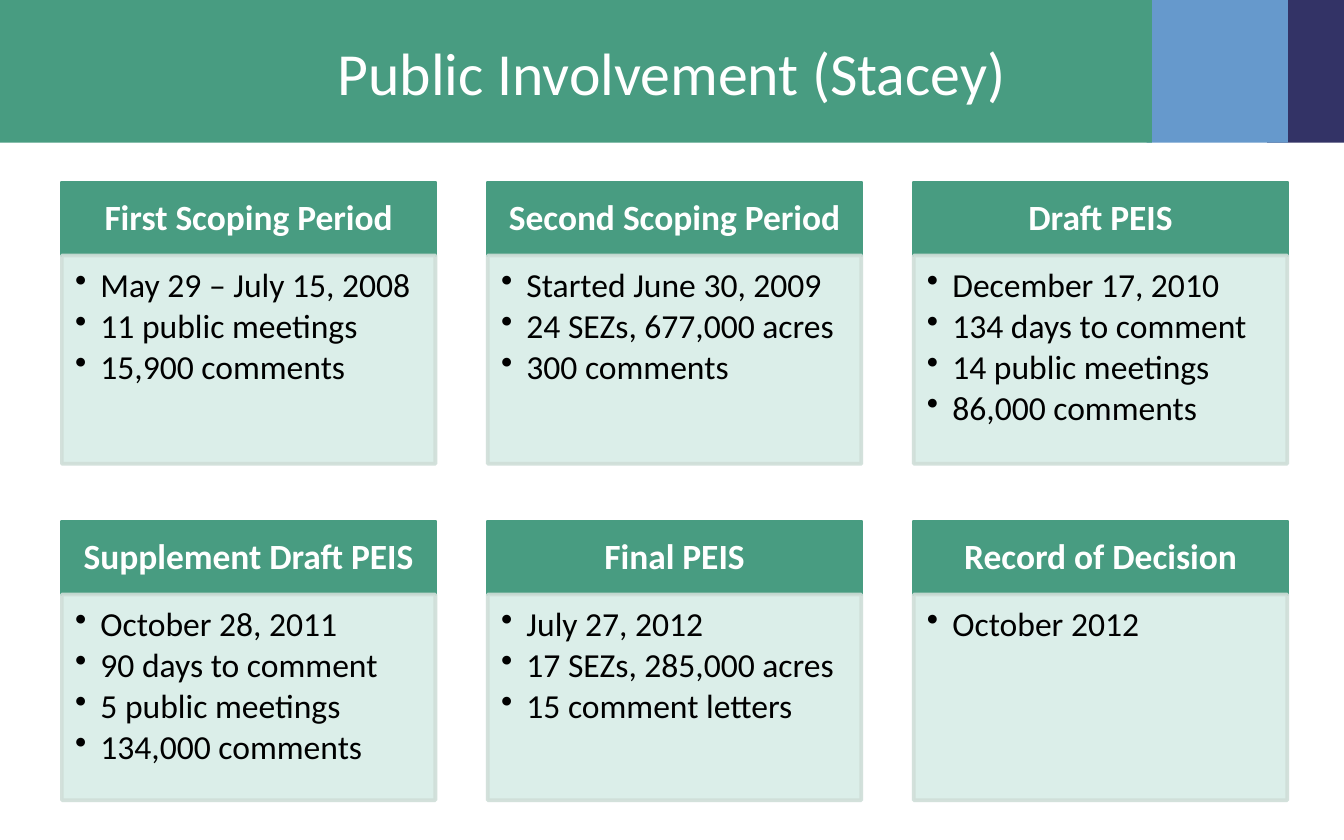
from pptx import Presentation
from pptx.dml.color import RGBColor
from pptx.enum import shapes, text
from pptx.oxml.ns import qn
from pptx.util import Cm, Pt
from lxml import etree

TITLE = "Public Involvement (Stacey)"
STAGES = [
    ("First Scoping Period",
     ["May 29 – July 15, 2008", "11 public meetings", "15,900 comments"]),
    ("Second Scoping Period",
     ["Started June 30, 2009", "24 SEZs, 677,000 acres", "300 comments"]),
    ("Draft PEIS",
     ["December 17, 2010", "134 days to comment", "14 public meetings", "86,000 comments"]),
    ("Supplement Draft PEIS",
     ["October 28, 2011", "90 days to comment", "5 public meetings", "134,000 comments"]),
    ("Final PEIS",
     ["July 27, 2012", "17 SEZs, 285,000 acres", "15 comment letters"]),
    ("Record of Decision", ["October 2012"]),
]
GREEN, MINT, MINT_EDGE = "489C81", "D8EDE7", "CFDED8"
BANDS = [(23.95, 1.45, "333366"), (21.67, 2.67, "6699CC"), (0, 21.77, GREEN)]
BAND_HEIGHT = 2.7
COLUMNS, LEFT, PITCH, WIDTH = 3, 1.17, 8.05, 7.06
HEADING_HEIGHT = 1.38
ROWS = [(3.45, 3.94), (9.86, 3.89)]  # top of heading, height of details


def rgb(value):
    return RGBColor.from_string(value)


def add_box(left, top, width, height, fill, edge=None, opacity=None):
    box = slide.shapes.add_shape(shapes.MSO_SHAPE.RECTANGLE,
                                 Cm(left), Cm(top), Cm(width), Cm(height))
    box.shadow.inherit = False
    box.fill.solid()
    box.fill.fore_color.rgb = rgb(fill)
    if edge:
        box.line.color.rgb = rgb(edge)
        box.line.width = Pt(2)
    else:
        box.line.fill.background()
    if opacity:
        for color in box.element.spPr.iter(qn("a:srgbClr")):
            etree.SubElement(color, qn("a:alpha"), val=str(opacity * 1000))
    return box


def set_margins(frame, left, top, right, bottom):
    frame.word_wrap = True
    frame.margin_left, frame.margin_top = Cm(left), Cm(top)
    frame.margin_right, frame.margin_bottom = Cm(right), Cm(bottom)


def set_font(paragraph, size, color, bold=False):
    font = paragraph.font
    font.name, font.size, font.bold = "Calibri", Pt(size), bold
    font.color.rgb = rgb(color)


def add_bullet(paragraph):
    properties = paragraph._p.get_or_add_pPr()
    indent = Cm(0.48)
    properties.set("marL", str(indent))
    properties.set("indent", str(-indent))
    etree.SubElement(properties, qn("a:buChar"), char="•")


def add_heading(heading, left, top):
    frame = add_box(left, top, WIDTH, HEADING_HEIGHT, GREEN, GREEN).text_frame
    set_margins(frame, 0.38, 0.2, 0.38, 0.2)
    frame.vertical_anchor = text.MSO_ANCHOR.MIDDLE
    paragraph = frame.paragraphs[0]
    paragraph.text = heading
    paragraph.alignment = text.PP_ALIGN.CENTER
    paragraph.line_spacing = 0.9
    set_font(paragraph, 19, "FFFFFF", bold=True)


def add_details(details, left, top, height):
    frame = add_box(left, top, WIDTH, height, MINT, MINT_EDGE, opacity=90).text_frame
    set_margins(frame, 0.25, 0.25, 0.36, 0.4)
    frame.vertical_anchor = text.MSO_ANCHOR.TOP
    for number, detail in enumerate(details):
        paragraph = frame.add_paragraph() if number else frame.paragraphs[0]
        paragraph.text = detail
        add_bullet(paragraph)
        paragraph.alignment = text.PP_ALIGN.LEFT
        paragraph.line_spacing = 0.9
        paragraph.space_after = Pt(2.4)
        set_font(paragraph, 18, "000000")


prs = Presentation()
prs.slide_width, prs.slide_height = Cm(25.4), Cm(15.88)
slide = prs.slides.add_slide(prs.slide_layouts[5])

for left, width, color in BANDS:
    add_box(left, 0, width, BAND_HEIGHT, color)

title = slide.shapes.title
title.element.getparent().append(title.element)  # in front of the bands
title.left, title.top, title.width, title.height = Cm(1.27), Cm(0.3), Cm(22.86), Cm(2.12)
title.text_frame.text = TITLE
title.text_frame.vertical_anchor = text.MSO_ANCHOR.MIDDLE
title.text_frame.paragraphs[0].alignment = text.PP_ALIGN.CENTER
set_font(title.text_frame.paragraphs[0], 32, "FFFFFF")

for index, (heading, details) in enumerate(STAGES):
    row, column = divmod(index, COLUMNS)
    top, details_height = ROWS[row]
    left = LEFT + column * PITCH
    add_heading(heading, left, top)
    add_details(details, left, top + HEADING_HEIGHT, details_height)

prs.save("out.pptx")
